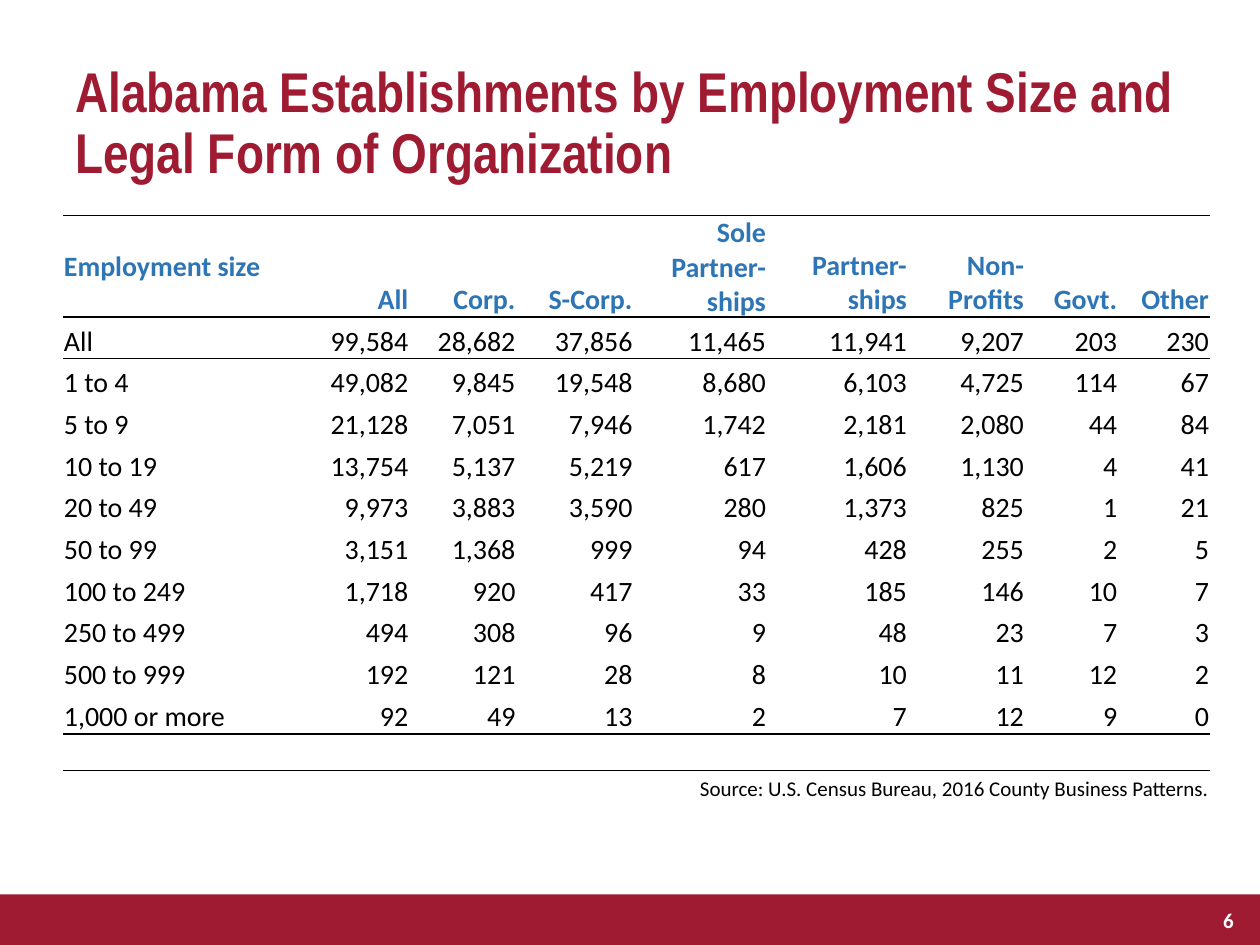
from dataclasses import dataclass

from lxml.etree import SubElement
from pptx import Presentation
from pptx.dml.color import RGBColor
from pptx.enum.shapes import MSO_SHAPE
from pptx.enum.text import MSO_ANCHOR, PP_ALIGN
from pptx.oxml.ns import qn
from pptx.table import Table, _Cell
from pptx.text.text import TextFrame
from pptx.util import Cm, Pt

COLORS = {"crimson": "9E1B32", "blue": "2E75B6", "black": "000000", "white": "FFFFFF"}
PLAIN = "{2D5ABB26-0587-4C30-8999-92F81FD0307C}"  # table style without grid

WIDTHS = (4.8, 2.18, 2.16, 2.36, 2.69, 2.84, 2.36, 1.88, 1.85)
HEADS = ("Employment size", "All", "Corp.", "S-Corp.", "Sole Partner-ships",
         "Partner-ships", "Non-Profits", "Govt.", "Other")
ROWS = (
    ("All", 99584, 28682, 37856, 11465, 11941, 9207, 203, 230),
    ("1 to 4", 49082, 9845, 19548, 8680, 6103, 4725, 114, 67),
    ("5 to 9", 21128, 7051, 7946, 1742, 2181, 2080, 44, 84),
    ("10 to 19", 13754, 5137, 5219, 617, 1606, 1130, 4, 41),
    ("20 to 49", 9973, 3883, 3590, 280, 1373, 825, 1, 21),
    ("50 to 99", 3151, 1368, 999, 94, 428, 255, 2, 5),
    ("100 to 249", 1718, 920, 417, 33, 185, 146, 10, 7),
    ("250 to 499", 494, 308, 96, 9, 48, 23, 7, 3),
    ("500 to 999", 192, 121, 28, 8, 10, 11, 12, 2),
    ("1,000 or more", 92, 49, 13, 2, 7, 12, 9, 0),
)
SOURCE = "Source: U.S. Census Bureau, 2016 County Business Patterns."
HEIGHTS = (1.65, *[0.84] * len(ROWS), 0.74, 0.64)


@dataclass(frozen=True)
class Style:
    size: int
    color: str = "black"
    bold: bool = False
    name: str = "Calibri"


@dataclass(frozen=True)
class Label:
    text: str
    box: tuple[float, float, float, float]
    style: Style
    align: PP_ALIGN = PP_ALIGN.LEFT
    anchor: MSO_ANCHOR = MSO_ANCHOR.TOP
    lead: float = 1.0


HEAD = Style(16, "blue", True)
BODY = Style(16)
NOTE = Style(12)
LABELS = (
    Label("6", (24.05, 18.03, 1.07, 1.02), Style(12, "white", True),
          PP_ALIGN.RIGHT, MSO_ANCHOR.MIDDLE),
    Label("Alabama Establishments by Employment Size and Legal Form of Organization",
          (1.27, 1.17, 22.86, 3.18), Style(32, "crimson", True, "Arial Narrow"), lead=0.9),
)


def color(key: str) -> RGBColor:
    return RGBColor.from_string(COLORS[key])


def write(frame: TextFrame, text: str, style: Style, align: PP_ALIGN, lead: float = 1.0) -> None:
    para = frame.paragraphs[0]
    para.alignment, para.line_spacing = align, lead
    run = para.add_run()
    run.text = text
    form = {"size": Pt(style.size), "bold": style.bold, "name": style.name}
    for key, value in form.items():
        setattr(run.font, key, value)
    run.font.color.rgb = color(style.color)


def draw_label(slide, label: Label) -> None:
    frame = slide.shapes.add_textbox(*map(Cm, label.box)).text_frame
    frame.word_wrap = True
    frame.vertical_anchor = label.anchor
    write(frame, label.text, label.style, label.align, label.lead)


def draw_bar(slide) -> None:
    bar = slide.shapes.add_shape(MSO_SHAPE.RECTANGLE, Cm(0), Cm(18.03), Cm(25.4), Cm(1.02))
    bar.shadow.inherit = False
    bar.fill.solid()
    bar.fill.fore_color.rgb = color("crimson")
    bar.line.fill.background()


def rule(cell: _Cell, *sides: str) -> None:
    """Draw a 1 pt black border on the given sides, in the order T, B."""
    for side in sides:
        line = SubElement(cell._tc.get_or_add_tcPr(), qn(f"a:ln{side}"), w=str(Pt(1)))
        fill = SubElement(line, qn("a:solidFill"))
        SubElement(fill, qn("a:srgbClr"), val=COLORS["black"])


def span(grid: Table, row: int) -> _Cell:
    """Merge a whole row and return its first cell."""
    cell = grid.cell(row, 0)
    cell.merge(grid.cell(row, len(WIDTHS) - 1))
    return cell


def draw_table(slide) -> None:
    frame = slide.shapes.add_table(len(HEIGHTS), len(WIDTHS), Cm(1.27), Cm(4.34),
                                   Cm(sum(WIDTHS)), Cm(sum(HEIGHTS)))
    grid = frame.table
    grid.first_row = grid.horz_banding = False
    grid._tbl.tblPr.find(qn("a:tableStyleId")).text = PLAIN
    for col, width in zip(grid.columns, WIDTHS):
        col.width = Cm(width)
    for row, height in zip(grid.rows, HEIGHTS):
        row.height = Cm(height)

    last = len(ROWS)
    edges = {0: ("T", "B"), 1: ("T",), last: ("B",), last + 1: ("T",)}
    form = {"margin_left": Cm(0.02), "margin_right": Cm(0.02), "margin_top": Cm(0.02),
            "margin_bottom": 0, "vertical_anchor": MSO_ANCHOR.BOTTOM}
    for i, row in enumerate(grid.rows):
        for cell in row.cells:
            for key, value in form.items():
                setattr(cell, key, value)
            rule(cell, *edges.get(i, ()))
            cell.fill.background()

    for i, row in enumerate((HEADS, *ROWS)):
        for j, value in enumerate(row):
            text = value if isinstance(value, str) else f"{value:,}"
            write(grid.cell(i, j).text_frame, text, BODY if i else HEAD,
                  PP_ALIGN.RIGHT if j else PP_ALIGN.LEFT)
    grid.cell(0, 0).vertical_anchor = MSO_ANCHOR.MIDDLE

    span(grid, last + 1)
    for row in (last + 1, last + 2):
        for cell in grid.rows[row].cells:
            SubElement(cell.text_frame.paragraphs[0]._p, qn("a:endParaRPr"), sz="1200")
    write(span(grid, last + 2).text_frame, SOURCE, NOTE, PP_ALIGN.RIGHT)


def main() -> None:
    deck = Presentation()
    deck.slide_width, deck.slide_height = Cm(25.4), Cm(19.05)
    slide = deck.slides.add_slide(deck.slide_layouts[6])
    draw_bar(slide)
    for label in LABELS:
        draw_label(slide, label)
    draw_table(slide)
    deck.save("out.pptx")


if __name__ == "__main__":
    main()
